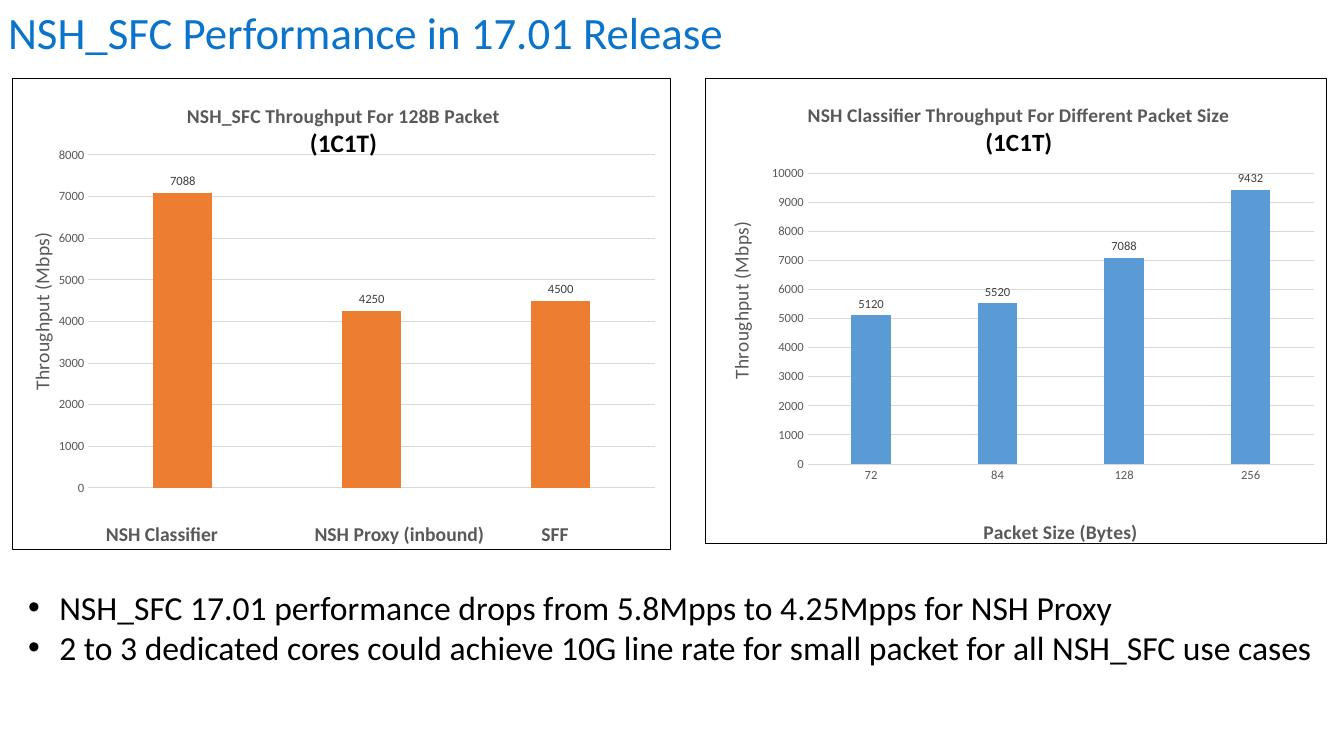
"""Build the NSH_SFC performance slide with two throughput charts."""
from lxml import etree
from pptx import Presentation
from pptx.chart.data import CategoryChartData
from pptx.dml.color import RGBColor
from pptx.enum.chart import XL_CHART_TYPE, XL_LABEL_POSITION, XL_TICK_MARK
from pptx.enum.text import MSO_ANCHOR, PP_ALIGN
from pptx.oxml import parse_xml
from pptx.oxml.ns import nsdecls, qn
from pptx.util import Inches, Pt

COLORS = {
    "title": "0A74CC", "black": "000000", "grey": "595959", "label": "404040",
    "grid": "D9D9D9", "orange": "ED7D31", "blue": "5B9BD5",
}
FONT = "Calibri"


def style(font, size, color, bold=False):
    font.name = FONT
    font.size = Pt(size)
    font.bold = bold
    font.color.rgb = RGBColor.from_string(COLORS[color])


def place(element, x, y, w=None, h=None):
    for old in element.findall(qn("c:layout")):
        element.remove(old)
    layout = parse_xml(f"<c:layout {nsdecls('c')}><c:manualLayout/></c:layout>")
    values = {"xMode": "edge", "yMode": "edge", "x": x, "y": y}
    if w is not None:
        values = {"layoutTarget": "inner", **values, "w": w, "h": h}
    for name, value in values.items():
        etree.SubElement(layout[0], qn(f"c:{name}")).set("val", str(value))
    tx = element.find(qn("c:tx"))
    if tx is None:
        element.insert(0, layout)
    else:
        tx.addnext(layout)


prs = Presentation()
prs.slide_width = Inches(13.33)
prs.slide_height = Inches(7.5)
s = prs.slides.add_slide(prs.slide_layouts[5])

title = s.shapes.title
title.left, title.top = Inches(-0.02), Inches(0)
title.width, title.height = Inches(8.53), Inches(0.64)
tf = title.text_frame
tf.vertical_anchor = MSO_ANCHOR.TOP
p = tf.paragraphs[0]
p.alignment = PP_ALIGN.LEFT
r = p.add_run()
r.text = "NSH_SFC Performance in 17.01 Release"
style(r.font, 32, "title")

charts = [
    dict(left=6.99, width=6.17, color="blue",
         heading="NSH Classifier Throughput For Different Packet Size",
         cats=["72", "84", "128", "256"], vals=[5120, 5520, 7088, 9432],
         top=10000, plot=(0.165, 0.204, 0.815, 0.625),
         heading_at=(0.16, 0.045), value_at=(0.03, 0.305),
         cat_title="Packet Size (Bytes)"),
    dict(left=0.12, width=6.54, color="orange",
         heading="NSH_SFC Throughput For 128B Packet",
         cats=["1", "2", "3"], vals=[7088, 4250, 4500],
         top=8000, plot=(0.115, 0.163, 0.861, 0.706),
         heading_at=(0.26, 0.045), value_at=(0.018, 0.32),
         cat_title=None),
]
for c in charts:
    data = CategoryChartData()
    data.categories = c["cats"]
    data.add_series("Series 1", c["vals"])
    chart = s.shapes.add_chart(
        XL_CHART_TYPE.COLUMN_CLUSTERED, Inches(c["left"]), Inches(0.77),
        Inches(c["width"]), Inches(4.69), data).chart
    style(chart.font, 10, "black")
    chart.has_legend = False
    chart.element.find(qn("c:chart")).addnext(parse_xml(
        f'<c:spPr {nsdecls("c", "a")}><a:solidFill><a:srgbClr val="FFFFFF"/></a:solidFill>'
        f'<a:ln w="9525"><a:solidFill><a:srgbClr val="{COLORS["black"]}"/></a:solidFill></a:ln></c:spPr>'))
    place(chart.element.find(".//" + qn("c:plotArea")), *c["plot"])

    chart.has_title = True
    tf = chart.chart_title.text_frame
    p = tf.paragraphs[0]
    for text, size, color in ((c["heading"], 14, "grey"), ("(1C1T)", 18, "black")):
        r = p.add_run()
        r.text = text
        style(r.font, size, color, True)
        if color == "grey":
            p = tf.add_paragraph()
    place(chart.chart_title.element, *c["heading_at"])

    plot = chart.plots[0]
    plot.vary_by_categories = False
    plot.gap_width = 219
    plot.overlap = -27
    series = plot.series[0]
    series.format.fill.solid()
    series.format.fill.fore_color.rgb = RGBColor.from_string(COLORS[c["color"]])
    plot.has_data_labels = True
    labels = plot.data_labels
    labels.show_value = True
    labels.position = XL_LABEL_POSITION.OUTSIDE_END
    style(labels.font, 9, "label")

    value_axis, cat_axis = chart.value_axis, chart.category_axis
    value_axis.minimum_scale = 0
    value_axis.maximum_scale = c["top"]
    value_axis.major_unit = 1000
    value_axis.format.line.fill.background()
    grid = value_axis.major_gridlines.format.line
    grid.width = Pt(0.75)
    grid.color.rgb = RGBColor.from_string(COLORS["grid"])
    cat_axis.format.line.width = Pt(0.75)
    cat_axis.format.line.color.rgb = RGBColor.from_string(COLORS["grid"])
    cat_axis.visible = c["cat_title"] is not None

    axis_titles = [(value_axis, "Throughput (Mbps)", c["value_at"], False)]
    if c["cat_title"]:
        axis_titles.append((cat_axis, c["cat_title"], (0.442, 0.938), True))
    for axis, text, at, bold in axis_titles:
        axis.major_tick_mark = XL_TICK_MARK.NONE
        style(axis.tick_labels.font, 9, "grey")
        r = axis.axis_title.text_frame.paragraphs[0].add_run()
        r.text = text
        style(r.font, 14, "grey", bold)
        place(axis.axis_title.element, *at)
    value_axis.axis_title.element.find(".//" + qn("a:bodyPr")).set("rot", "-5400000")

for text, left, width in (("NSH Classifier", 1.05, 1.3),
                          ("NSH Proxy (inbound)", 3.12, 1.9), ("SFF", 5.37, 0.5)):
    tf = s.shapes.add_textbox(Inches(left), Inches(5.14), Inches(width), Inches(0.3)).text_frame
    tf.word_wrap = True
    tf.vertical_anchor = MSO_ANCHOR.MIDDLE
    tf.margin_left = tf.margin_right = tf.margin_top = tf.margin_bottom = 0
    r = tf.paragraphs[0].add_run()
    r.text = text
    style(r.font, 14, "grey", True)

tf = s.shapes.add_textbox(Inches(0.18), Inches(5.77), Inches(12.98), Inches(0.91)).text_frame
tf.word_wrap = True
bullets = [
    "NSH_SFC 17.01 performance drops from 5.8Mpps to 4.25Mpps for NSH Proxy",
    "2 to 3 dedicated cores could achieve 10G line rate for small packet for all NSH_SFC use cases",
]
for i, text in enumerate(bullets):
    p = tf.add_paragraph() if i else tf.paragraphs[0]
    r = p.add_run()
    r.text = text
    style(r.font, 24, "black")
    pPr = p._p.get_or_add_pPr()
    pPr.set("marL", str(Inches(0.31)))
    pPr.set("indent", str(Inches(-0.31)))
    etree.SubElement(pPr, qn("a:buFont")).set("typeface", "Arial")
    etree.SubElement(pPr, qn("a:buChar")).set("char", "•")

prs.save("out.pptx")
